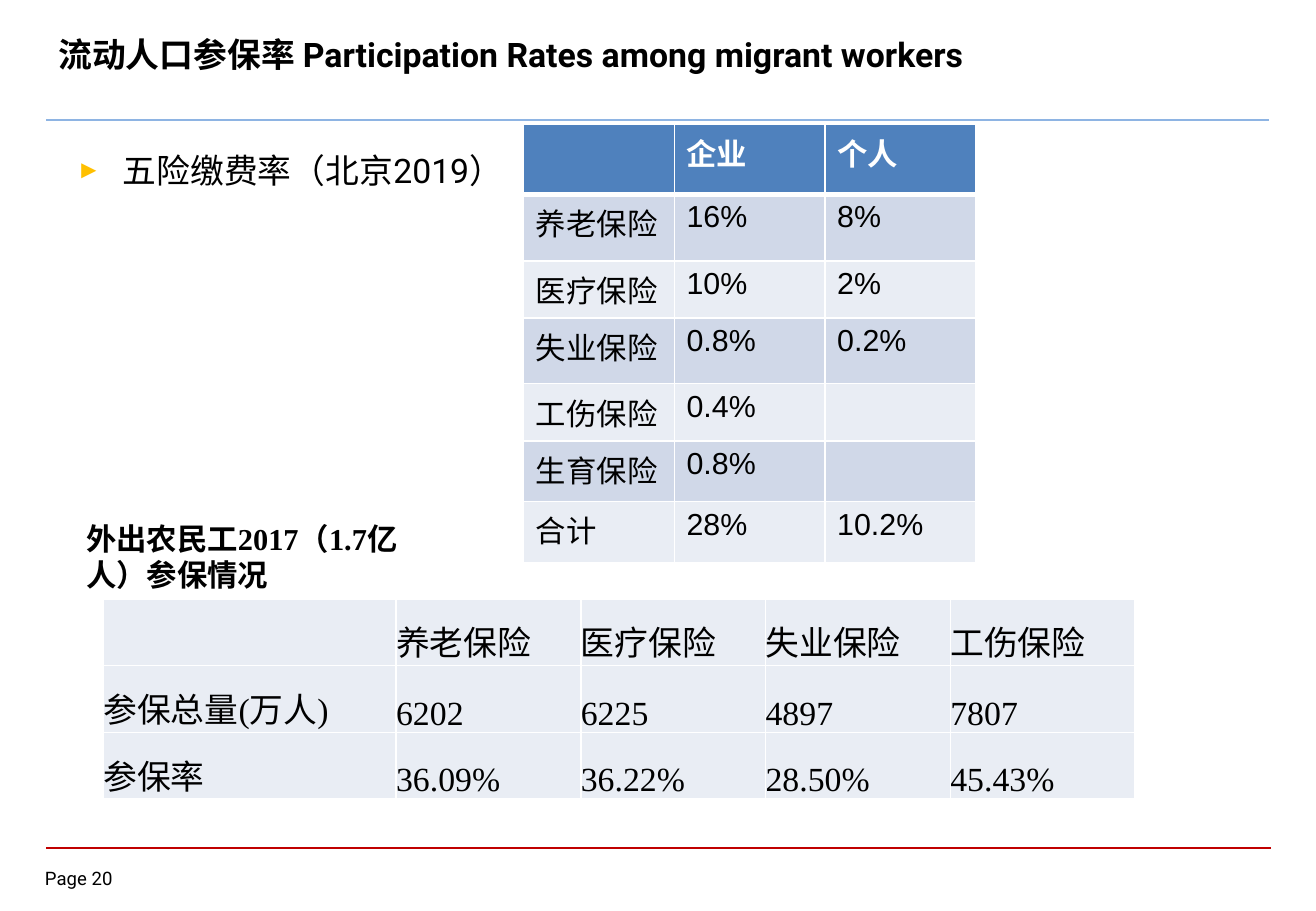
from dataclasses import dataclass

from lxml import etree
from pptx import Presentation
from pptx import util as u
from pptx.dml.color import RGBColor
from pptx.enum import shapes, text
from pptx.oxml.ns import qn

WIDTH, HEIGHT = u.Inches(10.83), u.Inches(7.5)
BLACK, WHITE, GOLD = "000000", "FFFFFF", "FFC000"
HEADER, BAND, PALE = "4F81BD", "D0D8E8", "E9EDF4"


@dataclass(frozen=True)
class Box:
    """A frame in percent of the slide's width and height."""
    left: float
    top: float
    width: float
    height: float


@dataclass(frozen=True)
class Style:
    """The look of a paragraph."""
    font: str
    size: float
    bold: bool = False
    color: str = BLACK


@dataclass(frozen=True)
class Rule:
    """A horizontal rule with its ends and height in percent."""
    start: float
    end: float
    top: float
    color: str
    weight: float


@dataclass(frozen=True)
class Grid:
    """A table with its place, columns and rows in percent."""
    left: float
    top: float
    columns: list[float]
    rows: list[float]
    values: list[list[str]]
    fills: list[str]
    style: Style
    header: bool = False
    anchor: text.MSO_ANCHOR = text.MSO_ANCHOR.TOP
    inset: bool = True


RULES = [
    Rule(3.51, 96.58, 93.07, "C00000", 1),
    Rule(3.51, 96.4, 13.2, "8EB4E3", 1.5),
]
ENROLMENT = Grid(
    7.85, 65.73, [22.25] + [14.04] * 4, [7.33] * 3,
    [["", "养老保险", "医疗保险", "失业保险", "工伤保险"],
     ["参保总量(万人)", "6202", "6225", "4897", "7807"],
     ["参保率", "36.09%", "36.22%", "28.50%", "45.43%"]],
    [PALE] * 3, Style("Times New Roman", 20),
    anchor=text.MSO_ANCHOR.BOTTOM, inset=False)
CONTRIBUTION = Grid(
    39.8, 13.6, [11.45] * 3, [7.73, 7.33, 6.27, 7.2, 6.27, 6.67, 6.67],
    [["", "企业", "个人"],
     ["养老保险", "16%", "8%"],
     ["医疗保险", "10%", "2%"],
     ["失业保险", "0.8%", "0.2%"],
     ["工伤保险", "0.4%", ""],
     ["生育保险", "0.8%", ""],
     ["合计", "28%", "10.2%"]],
    [HEADER] + [BAND, PALE] * 3, Style("Arial", 18), header=True)


def across(share: float) -> int:
    """Turn a percentage of the slide's width into a length."""
    return round(WIDTH * share / 100)


def down(share: float) -> int:
    """Turn a percentage of the slide's height into a length."""
    return round(HEIGHT * share / 100)


def frame(box: Box) -> tuple[int, int, int, int]:
    """Return left, top, width and height as lengths."""
    return across(box.left), down(box.top), across(box.width), down(box.height)


def paint(target, color: str) -> None:
    """Give a fill a solid colour."""
    target.solid()
    target.fore_color.rgb = RGBColor.from_string(color)


def format_paragraph(paragraph, style: Style) -> None:
    """Apply a style to a left-aligned paragraph."""
    paragraph.alignment = text.PP_ALIGN.LEFT
    paragraph.space_before = u.Pt(0)
    paragraph.font.name = style.font
    paragraph.font.size = u.Pt(style.size)
    paragraph.font.bold = style.bold
    paint(paragraph.font.fill, style.color)


def add_bullet(paragraph, character: str, color: str, share: int, indent: int) -> None:
    """Give a paragraph a coloured bullet and a hanging indent."""
    properties = paragraph._p.get_or_add_pPr()
    properties.set("marL", str(indent))
    properties.set("indent", str(-indent))
    bullet_color = etree.SubElement(properties, qn("a:buClr"))
    etree.SubElement(bullet_color, qn("a:srgbClr"), val=color)
    etree.SubElement(properties, qn("a:buSzPct"), val=str(share * 1000))
    etree.SubElement(properties, qn("a:buFont"), typeface="Arial")
    etree.SubElement(properties, qn("a:buChar"), char=character)


def fill_placeholder(shape, box: Box, words: str, anchor: text.MSO_ANCHOR):
    """Move a placeholder, set its text and return its paragraph."""
    shape.left, shape.top, shape.width, shape.height = frame(box)
    shape.text_frame.text = words
    shape.text_frame.auto_size = text.MSO_AUTO_SIZE.NONE
    shape.text_frame.vertical_anchor = anchor
    return shape.text_frame.paragraphs[0]


def add_label(slide, box: Box, words: str, style: Style, inset: bool = True) -> None:
    """Add a wrapping text box."""
    text_frame = slide.shapes.add_textbox(*frame(box)).text_frame
    text_frame.word_wrap = True
    text_frame.text = words
    if not inset:
        text_frame.margin_left = text_frame.margin_right = 0
        text_frame.margin_top = text_frame.margin_bottom = 0
    format_paragraph(text_frame.paragraphs[0], style)


def add_rule(slide, rule: Rule) -> None:
    """Draw a horizontal rule without a shadow."""
    connector = slide.shapes.add_connector(
        shapes.MSO_CONNECTOR.STRAIGHT, across(rule.start), down(rule.top),
        across(rule.end), down(rule.top))
    paint(connector.line.fill, rule.color)
    connector.line.width = u.Pt(rule.weight)
    etree.SubElement(connector._element.spPr, qn("a:effectLst"))


def add_borders(cell, bottom: float, top: float) -> None:
    """Draw white borders around a cell."""
    properties = cell._tc.get_or_add_tcPr()
    for side, weight in {"L": 1, "R": 1, "T": top, "B": bottom}.items():
        line = etree.SubElement(properties, qn(f"a:ln{side}"), w=str(u.Pt(weight)))
        solid = etree.SubElement(line, qn("a:solidFill"))
        etree.SubElement(solid, qn("a:srgbClr"), val=WHITE)


def add_grid(slide, grid: Grid) -> None:
    """Add a table with filled cells and white borders."""
    box = Box(grid.left, grid.top, sum(grid.columns), sum(grid.rows))
    table = slide.shapes.add_table(
        len(grid.rows), len(grid.columns), *frame(box)).table
    table.first_row = grid.header
    table.horz_banding = False
    for column, share in zip(table.columns, grid.columns):
        column.width = across(share)
    for index, row in enumerate(table.rows):
        row.height = down(grid.rows[index])
        heading = grid.header and index == 0
        style = Style(grid.style.font, grid.style.size, True, WHITE) if heading else grid.style
        for cell, words in zip(row.cells, grid.values[index]):
            add_borders(cell, 3 if heading else 1, 3 if grid.header and index == 1 else 1)
            paint(cell.fill, grid.fills[index])
            cell.vertical_anchor = grid.anchor
            if not grid.inset:
                cell.margin_left = cell.margin_right = 0
                cell.margin_top = cell.margin_bottom = 0
            cell.text = words
            format_paragraph(cell.text_frame.paragraphs[0], style)


def main() -> None:
    """Build the slide and save it."""
    presentation = Presentation()
    presentation.slide_width, presentation.slide_height = WIDTH, HEIGHT
    slide = presentation.slides.add_slide(presentation.slide_layouts[1])
    for rule in RULES:
        add_rule(slide, rule)
    add_label(slide, Box(3.42, 95.2, 6.74, 2.93), "Page 20", Style("Roboto", 11), inset=False)
    title = fill_placeholder(
        slide.shapes.title, Box(3.51, 1.2, 91.6, 9.47),
        "流动人口参保率 Participation Rates among migrant workers", text.MSO_ANCHOR.MIDDLE)
    format_paragraph(title, Style("Roboto", 20, bold=True))
    add_grid(slide, ENROLMENT)
    add_grid(slide, CONTRIBUTION)
    item = fill_placeholder(
        slide.placeholders[1], Box(4.89, 15.73, 76.36, 11.2),
        "五险缴费率（北京2019）", text.MSO_ANCHOR.TOP)
    add_bullet(item, "►", GOLD, 75, across(3.51))
    format_paragraph(item, Style("Roboto", 20))
    add_label(slide, Box(5.63, 56.4, 29.09, 9.47), "外出农民工2017（1.7亿人）参保情况",
              Style("Times New Roman", 18, bold=True))
    presentation.save("out.pptx")


if __name__ == "__main__":
    main()
